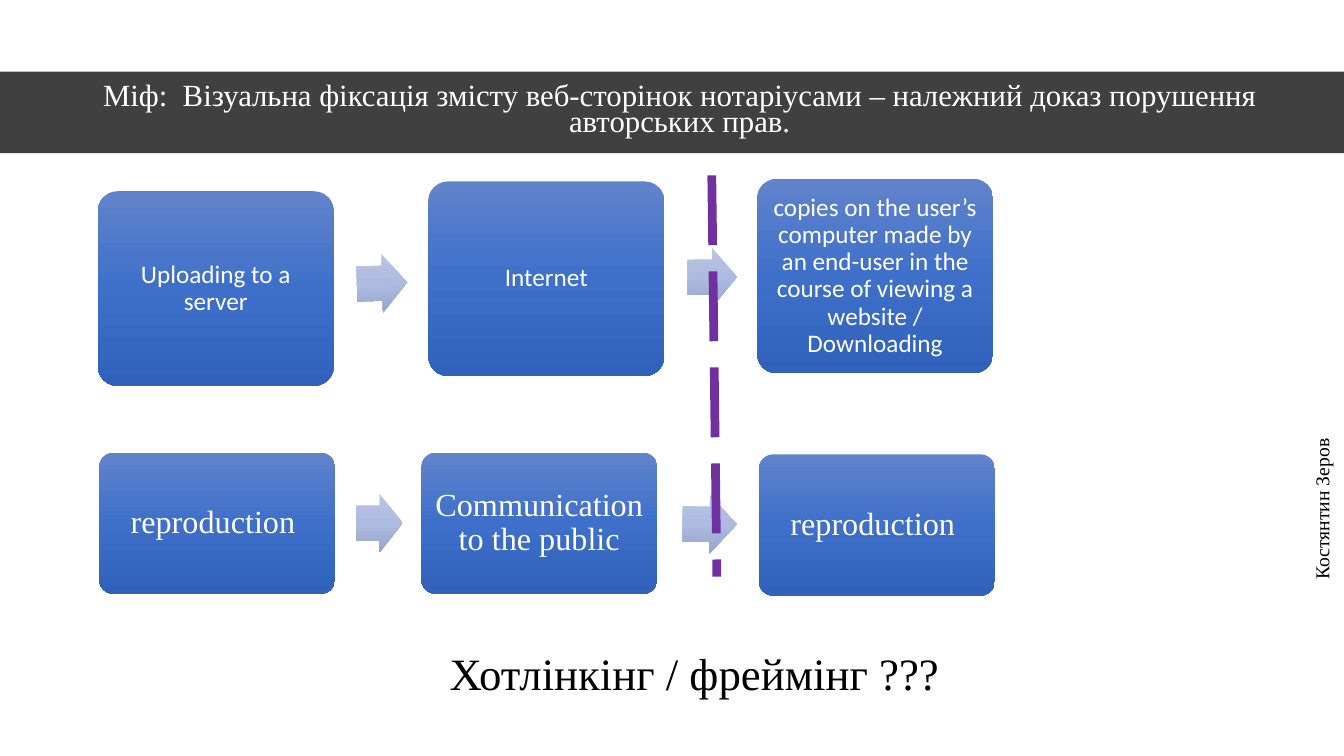
"""Build a slide comparing the technical and legal steps of publishing a web page."""
from copy import deepcopy

from lxml import etree
from pptx import Presentation
from pptx import util as u
from pptx.dml.color import RGBColor
from pptx.enum import dml, shapes, text
from pptx.oxml.ns import qn

COLORS = {
    "band": "000000", "light": "FFFFFF", "dark": "000000", "divider": "7030A0",
    "box": ["6183CB", "3E70CA", "3062BB"],
    "arrow": ["BBC5E3", "AEBBE0", "98A4CB"],
}
SERIF, SANS = "Times New Roman", "Calibri"

deck = Presentation()
deck.slide_width, deck.slide_height = u.Inches(13.33), u.Inches(7.5)
page = deck.slides.add_slide(deck.slide_layouts[6])
column, row = deck.slide_width / 100, deck.slide_height / 100


def draw(kind, left, top, width, height, stops, angle=0):
    """Add a shape, placed in percent of the slide, with a vertical three-stop gradient."""
    shape = page.shapes.add_shape(kind, int(left * column), int(top * row),
                                  int(width * column), int(height * row))
    shape.shadow.inherit = False
    shape.line.fill.background()
    shape.rotation = angle
    shape.fill.gradient()
    shape.fill.gradient_angle = 270
    first = shape._element.spPr.find(".//" + qn("a:gs"))
    first.addnext(deepcopy(first))
    for stop, position, color in zip(shape.fill.gradient_stops, (0, 0.5, 1), stops):
        stop.position = position
        stop.color.rgb = RGBColor.from_string(color)
    return shape


def write(shape, words, size, font=SERIF, color="light", align="CENTER",
          anchor="MIDDLE", spacing=1.0, wrap=True, inset=None):
    """Put one formatted paragraph in a shape."""
    frame = shape.text_frame
    frame.word_wrap = wrap
    frame.vertical_anchor = text.MSO_ANCHOR[anchor]
    if inset is not None:
        frame.margin_left = frame.margin_right = u.Inches(inset)
        frame.margin_top = frame.margin_bottom = u.Inches(inset)
    para = frame.paragraphs[0]
    para.alignment = text.PP_ALIGN[align]
    para.line_spacing = spacing
    span = para.add_run()
    span.text = words
    span.font.size, span.font.name = u.Pt(size), font
    span.font.color.rgb = RGBColor.from_string(COLORS[color])


band = page.shapes.add_shape(shapes.MSO_SHAPE.RECTANGLE, 0, int(9.47 * row),
                             deck.slide_width, int(10.8 * row))
band.shadow.inherit = False
band.line.fill.background()
band.fill.solid()
band.fill.fore_color.rgb = RGBColor.from_string(COLORS["band"])
band_color = band._element.spPr.find(qn("a:solidFill"))[0]
etree.SubElement(band_color, qn("a:alpha"), val="75000")

captions = [
    ("Міф:  Візуальна фіксація змісту веб-сторінок нотаріусами – належний доказ "
     "порушення авторських прав.", (4.58, 9.33, 91.97, 10.8), 0,
     dict(size=22, spacing=0.7)),
    ("Хотлінкінг / фреймінг ???", (32.71, 84.8, 38.33, 8.53), 0,
     dict(size=32, color="dark", align="LEFT", anchor="TOP", wrap=False)),
    ("Костянтин Зеров", (85.45, 52.8, 25.81, 4.53), 270,
     dict(size=14, color="dark", align="LEFT", anchor="TOP")),
]
for words, (left, top, width, height), angle, style in captions:
    caption = page.shapes.add_textbox(int(left * column), int(top * row),
                                      int(width * column), int(height * row))
    caption.rotation = angle
    write(caption, words, **style)

flows = [
    dict(height=25.73, style=dict(size=18, font=SANS, inset=0.07),
         steps=[("Uploading to a server", 7.28, 25.3),
                ("Internet", 31.88, 24),
                ("copies on the user’s computer made by an end-user in the course "
                 "of viewing a website / Downloading", 56.34, 23.65)],
         arrows=[(26.56, 33.6, 3.75, -1.8), (51.16, 32.8, 3.68, -0.4)]),
    dict(height=18.67, style=dict(size=23, font=SERIF, inset=0.09),
         steps=[("reproduction ", 7.38, 59.87),
                ("Communication to the public", 31.36, 59.87),
                ("reproduction ", 56.47, 60.1)],
         arrows=[(26.52, 65.33, 3.45, 0), (50.79, 65.47, 4.05, 0.3)]),
]
for flow in flows:
    for words, left, top in flow["steps"]:
        box = draw(shapes.MSO_SHAPE.ROUNDED_RECTANGLE, left, top, 17.55,
                   flow["height"], COLORS["box"])
        box.adjustments[0] = 0.1
        write(box, words, spacing=0.9, **flow["style"])
    for left, top, width, angle in flow["arrows"]:
        arrow = draw(shapes.MSO_SHAPE.RIGHT_ARROW, left, top, width, 7.73,
                     COLORS["arrow"], angle)
        arrow.adjustments[0], arrow.adjustments[1] = 0.6, 0.5

divider = page.shapes.add_connector(
    shapes.MSO_CONNECTOR.STRAIGHT, int(52.96 * column), int(23.2 * row),
    int(53.34 * column), int(76.27 * row))
divider.line.color.rgb = RGBColor.from_string(COLORS["divider"])
divider.line.width = u.Pt(6.25)
divider.line.dash_style = dml.MSO_LINE.LONG_DASH
etree.SubElement(divider._element.spPr, qn("a:effectLst"))

deck.save("out.pptx")
